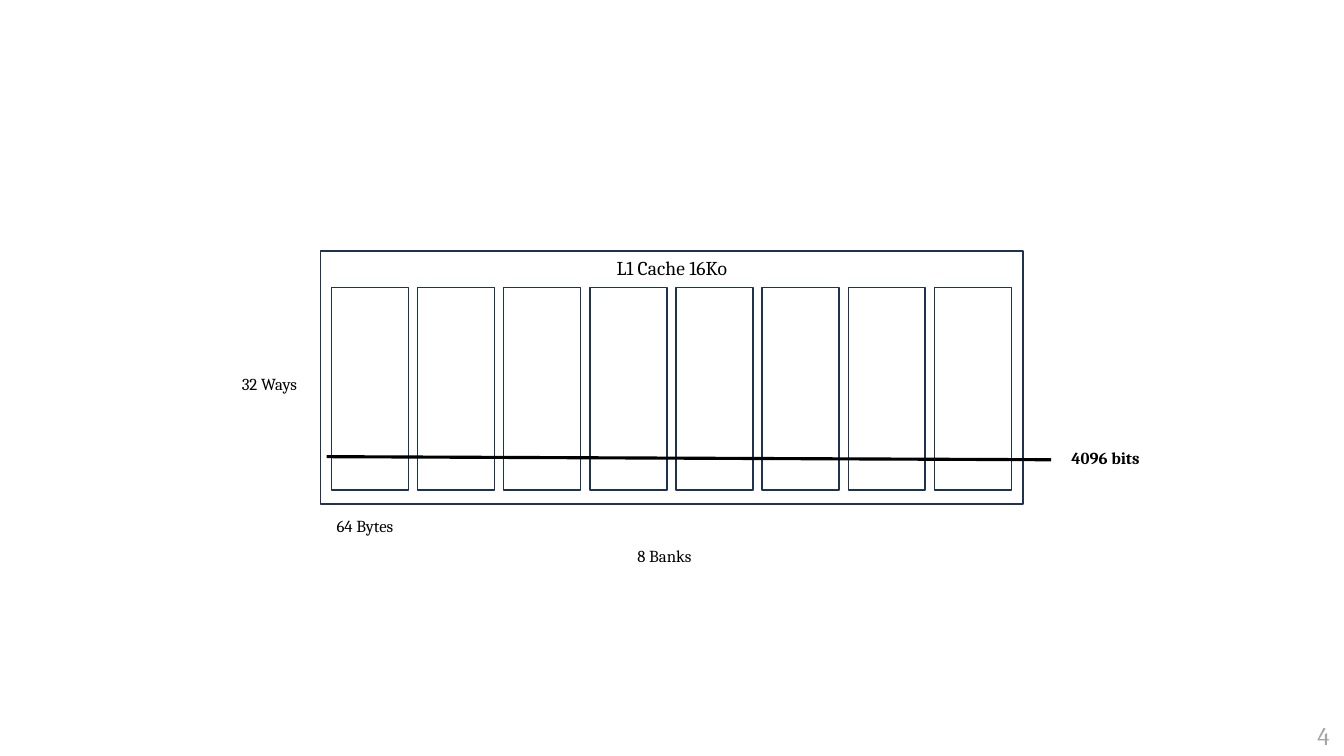
from lxml import etree
from pptx import Presentation
from pptx.dml.color import RGBColor
from pptx.enum import shapes, text
from pptx.util import Pt

NAVY = RGBColor(0x1E, 0x32, 0x56)
BLACK = RGBColor(0, 0, 0)
GRAY = RGBColor(0xA5, 0xA5, 0xA5)
FONT = "Cambria"
BANK_COUNT = 8


def write(frame, words, size, color=BLACK, bold=False):
    frame.text = words
    span = frame.paragraphs[0].runs[0]
    span.font.name = FONT
    span.font.size = Pt(size)
    span.font.color.rgb = color
    span.font.bold = bold


def add_label(page, words, left, top, width, height=21.8, size=12, color=BLACK, bold=False):
    box = page.shapes.add_textbox(Pt(left), Pt(top), Pt(width), Pt(height))
    box.text_frame.word_wrap = True
    box.text_frame.auto_size = text.MSO_AUTO_SIZE.SHAPE_TO_FIT_TEXT
    write(box.text_frame, words, size, color, bold)


def add_frame(page, left, top, width, height):
    box = page.shapes.add_shape(
        shapes.MSO_SHAPE.RECTANGLE, Pt(left), Pt(top), Pt(width), Pt(height))
    box.shadow.inherit = False
    box.fill.background()
    box.line.color.rgb = NAVY
    box.line.width = Pt(1)
    return box


def add_way_line(page, left, top, width, drop):
    line = page.shapes.add_connector(
        shapes.MSO_CONNECTOR.STRAIGHT, Pt(left), Pt(top), Pt(left + width), Pt(top + drop))
    line.line.color.rgb = BLACK
    line.line.width = Pt(2.25)
    properties = line.element.spPr
    etree.SubElement(properties, "{http://schemas.openxmlformats.org/drawingml/2006/main}effectLst")


def add_cache(page, left, top, width, height):
    cache = add_frame(page, left, top, width, height)
    cache.text_frame.vertical_anchor = text.MSO_ANCHOR.TOP
    write(cache.text_frame, "L1 Cache 16Ko", 14)
    cache.text_frame.paragraphs[0].alignment = text.PP_ALIGN.CENTER

    margin, pitch = 7.9, 61.5
    for bank in range(BANK_COUNT):
        add_frame(page, left + margin + bank * pitch, top + 26, 55, 144.7)

    label_width = 63.4
    add_label(page, "32 Ways", left - label_width, top + 84.2, label_width)
    add_label(page, "64 Bytes", left + 4.3, top + height + 4.5, label_width)
    add_label(page, "8 Banks", left + (width - label_width) / 2, top + height + 26.5, label_width)
    add_label(page, "4096 bits", left + width + 27.4, top + 136.8, 83.5, bold=True)
    add_way_line(page, left + 4.3, top + 146.9, 517.5, 2.2)


def add_page_number(page, right, bottom):
    add_label(page, "4", right - 26, bottom - 29, 26, 29, size=18, color=GRAY)


def main():
    deck = Presentation()
    deck.slide_width, deck.slide_height = Pt(960), Pt(540)
    page = deck.slides.add_slide(deck.slide_layouts[6])
    add_cache(page, 229, 179.3, 501.8, 180.7)
    add_page_number(page, 960, 540)
    deck.save("out.pptx")


if __name__ == "__main__":
    main()
